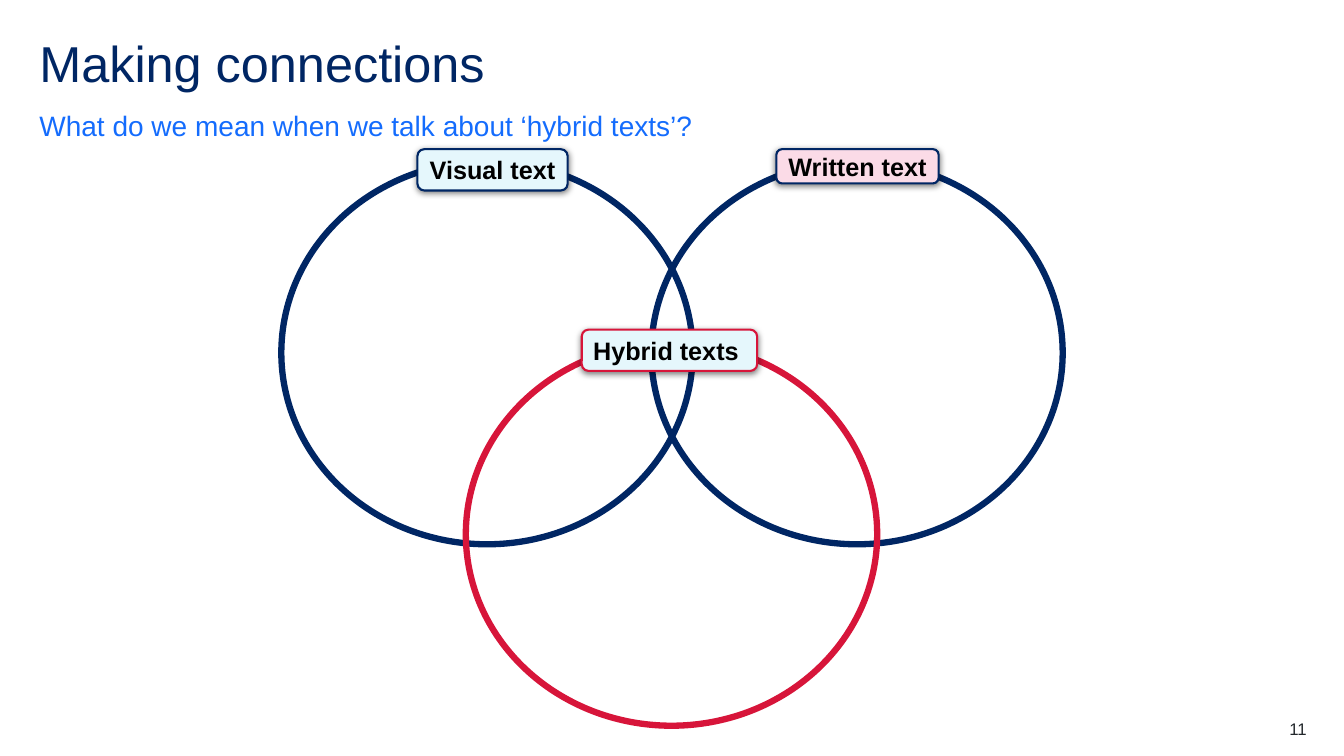
from dataclasses import dataclass
from typing import Any

from lxml.etree import SubElement
from pptx import Presentation
from pptx.dml.color import RGBColor
from pptx.enum.shapes import MSO_SHAPE
from pptx.enum.text import MSO_ANCHOR, PP_ALIGN
from pptx.oxml.ns import qn
from pptx.util import Emu, Pt

PX = 9144
NAVY = RGBColor(0x00, 0x26, 0x64)
BLUE = RGBColor(0x14, 0x6C, 0xFD)
RED = RGBColor(0xD7, 0x15, 0x3A)
PALE_BLUE = RGBColor(0xE5, 0xF7, 0xFC)
PALE_PINK = RGBColor(0xFB, 0xDB, 0xE7)
CHARCOAL = RGBColor(0x22, 0x27, 0x2B)
BLACK = RGBColor(0x00, 0x00, 0x00)
WHITE = RGBColor(0xFF, 0xFF, 0xFF)

CIRCLE_WIDTH, CIRCLE_HEIGHT = 408, 380
LABEL_FRAME = {
    "margin_left": Emu(9 * PX), "margin_right": Emu(9 * PX),
    "margin_top": Emu(4 * PX), "margin_bottom": Emu(4 * PX),
    "vertical_anchor": MSO_ANCHOR.MIDDLE, "word_wrap": False,
}
PLAIN_FRAME = {
    "margin_left": 0, "margin_right": 0, "margin_top": 0, "margin_bottom": 0,
    "vertical_anchor": MSO_ANCHOR.TOP, "word_wrap": True,
}


@dataclass(frozen=True)
class Box:
    left: int
    top: int
    width: int
    height: int

    def emu(self) -> tuple[Emu, ...]:
        return tuple(Emu(n * PX) for n in (self.left, self.top, self.width, self.height))


@dataclass(frozen=True)
class Heading:
    text: str
    box: Box
    size: int
    color: RGBColor
    paragraph: dict[str, Any]
    anchor: MSO_ANCHOR = MSO_ANCHOR.TOP


@dataclass(frozen=True)
class VennSet:
    name: str
    left: int
    top: int
    label: Box
    outline: RGBColor
    label_fill: RGBColor


HEADINGS = [
    Heading("Making connections", Box(39, 39, 1102, 60), 36, NAVY, {"line_spacing": 0.9}),
    Heading("What do we mean when we talk about ‘hybrid texts’?", Box(39, 107, 1102, 34),
            20, BLUE, {"line_spacing": 1.5, "space_after": Pt(12)}, MSO_ANCHOR.BOTTOM),
    Heading("11", Box(1217, 713, 79, 20), 12, CHARCOAL, {"alignment": PP_ALIGN.RIGHT}),
]
VENN_SETS = [
    VennSet("Visual text", 279, 160, Box(414, 148, 149, 41), NAVY, PALE_BLUE),
    VennSet("Written text", 646, 160, Box(770, 148, 161, 34), NAVY, PALE_PINK),
    VennSet("Hybrid texts ", 462, 340, Box(577, 327, 174, 41), RED, PALE_BLUE),
]


def apply_format(target: Any, values: dict[str, Any]) -> None:
    """Set each named attribute on the target."""
    for name, value in values.items():
        setattr(target, name, value)


def write_text(shape: Any, text: str, frame: dict[str, Any], paragraph: dict[str, Any],
               size: int, color: RGBColor, bold: bool = False) -> None:
    """Fill a shape with one formatted paragraph."""
    apply_format(shape.text_frame, frame)
    line = shape.text_frame.paragraphs[0]
    apply_format(line, paragraph)
    run = line.add_run()
    run.text = text
    apply_format(run.font, {"name": "Arial", "size": Pt(size), "bold": bold})
    run.font.color.rgb = color


def add_heading(slide: Any, heading: Heading) -> None:
    """Place a plain line of text on the slide."""
    textbox = slide.shapes.add_textbox(*heading.box.emu())
    frame = PLAIN_FRAME | {"vertical_anchor": heading.anchor}
    write_text(textbox, heading.text, frame, heading.paragraph, heading.size, heading.color)


def add_outlined(group: Any, preset: MSO_SHAPE, box: Box, color: RGBColor, width: float) -> Any:
    """Add a preset shape with a coloured outline and no shadow."""
    shape = group.shapes.add_shape(preset, *box.emu())
    shape.shadow.inherit = False
    shape.line.color.rgb = color
    shape.line.width = Pt(width)
    return shape


def add_soft_shadow(shape: Any) -> None:
    """Drop a half-transparent black shadow below the shape."""
    effects = shape.element.spPr.find(qn("a:effectLst"))
    shadow = SubElement(effects, qn("a:outerShdw"), blurRad=str(Pt(4.5)), dist=str(Pt(1.5)),
                        dir="5400000", algn="ctr", rotWithShape="0")
    tint = SubElement(shadow, qn("a:srgbClr"), val=str(BLACK))
    SubElement(tint, qn("a:alpha"), val="50000")


def add_venn_set(slide: Any, venn: VennSet) -> None:
    """Group a circle with the label on its rim."""
    group = slide.shapes.add_group_shape()
    rim = Box(venn.left, venn.top, CIRCLE_WIDTH, CIRCLE_HEIGHT)
    circle = add_outlined(group, MSO_SHAPE.OVAL, rim, venn.outline, 4.5)
    circle.fill.background()
    label = add_outlined(group, MSO_SHAPE.ROUNDED_RECTANGLE, venn.label, venn.outline, 1.5)
    label.fill.solid()
    label.fill.fore_color.rgb = venn.label_fill
    add_soft_shadow(label)
    write_text(label, venn.name, LABEL_FRAME, {"alignment": PP_ALIGN.CENTER}, 18, BLACK, True)


def main() -> None:
    """Build and save the slide."""
    deck = Presentation()
    apply_format(deck, {"slide_width": Emu(1333 * PX), "slide_height": Emu(750 * PX)})
    slide = deck.slides.add_slide(deck.slide_layouts[6])
    slide.background.fill.solid()
    slide.background.fill.fore_color.rgb = WHITE
    for heading in HEADINGS:
        add_heading(slide, heading)
    for venn in VENN_SETS:
        add_venn_set(slide, venn)
    deck.save("out.pptx")


if __name__ == "__main__":
    main()
